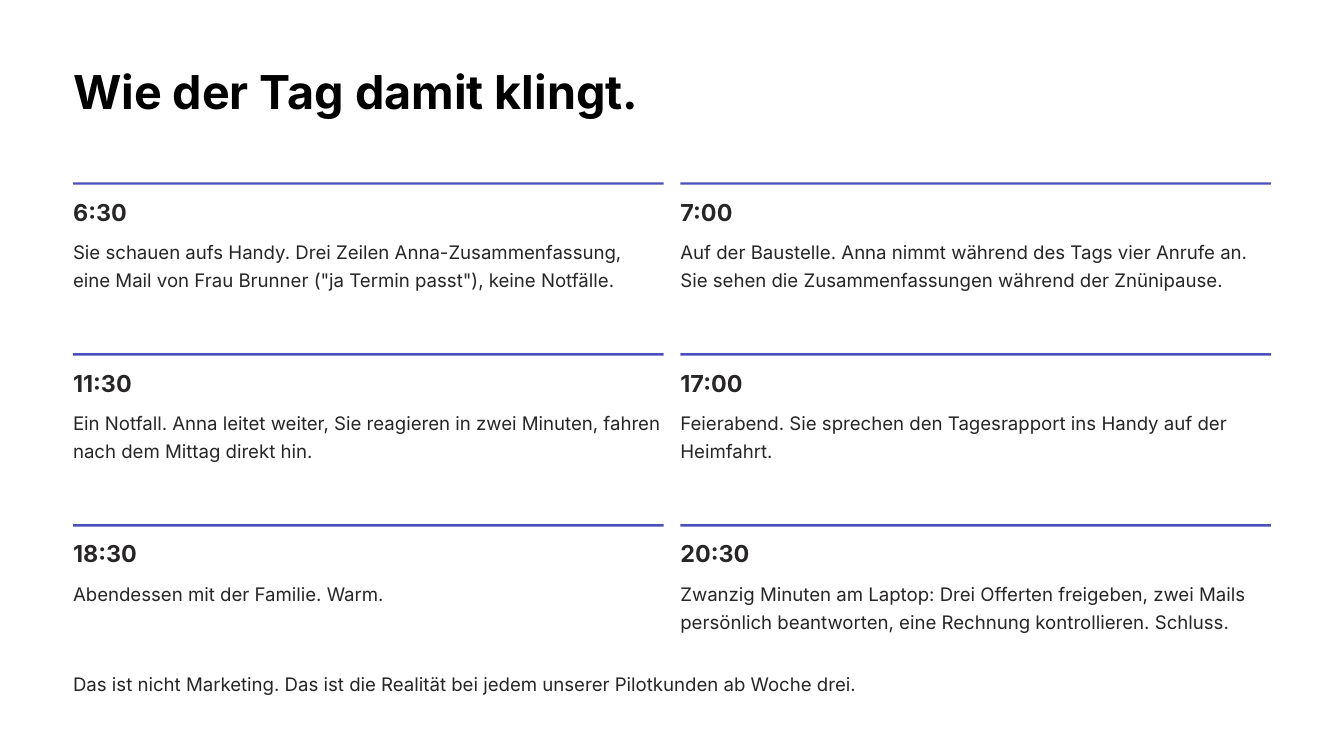
from typing import NamedTuple

from pptx import Presentation
from pptx.dml.color import RGBColor
from pptx.enum.shapes import MSO_SHAPE as Shape
from pptx.enum.text import MSO_ANCHOR as Anchor, MSO_AUTO_SIZE as Fit, PP_ALIGN as Align
from pptx.slide import Slide
from pptx.text.text import TextFrame
from pptx.util import Inches, Pt

FONT = "Inter"
COLORS = {"page": "FFFFFF", "title": "000000", "text": "272525", "rule": "4950BC"}

# Grid in inches
LEFT, TOP = 0.87, 2.17
COL, GAP = 7.03, 0.2
COLS, ROW = 2, 2.035
FULL = COLS * COL + GAP


class Style(NamedTuple):
    size: int
    line: int
    bold: bool
    color: str
    wrap: bool


class Box(NamedTuple):
    left: float
    top: float
    width: float
    height: float


class Event(NamedTuple):
    time: str
    text: str


TITLE = Style(40, 50, True, "title", False)
TIME = Style(20, 25, True, "text", False)
BODY = Style(16, 24, False, "text", True)

EVENTS = [
    Event("6:30", "Sie schauen aufs Handy. Drei Zeilen Anna-Zusammenfassung, "
          "eine Mail von Frau Brunner (\"ja Termin passt\"), keine Notfälle."),
    Event("7:00", "Auf der Baustelle. Anna nimmt während des Tags vier Anrufe an. "
          "Sie sehen die Zusammenfassungen während der Znünipause."),
    Event("11:30", "Ein Notfall. Anna leitet weiter, Sie reagieren in zwei Minuten, "
          "fahren nach dem Mittag direkt hin."),
    Event("17:00", "Feierabend. Sie sprechen den Tagesrapport ins Handy auf der Heimfahrt."),
    Event("18:30", "Abendessen mit der Familie. Warm."),
    Event("20:30", "Zwanzig Minuten am Laptop: Drei Offerten freigeben, zwei Mails "
          "persönlich beantworten, eine Rechnung kontrollieren. Schluss."),
]


def rgb(name: str) -> RGBColor:
    return RGBColor.from_string(COLORS[name])


def place(box: Box) -> list[int]:
    return [Inches(side) for side in box]


def write(frame: TextFrame, text: str, style: Style) -> None:
    frame.text = text
    frame.auto_size = Fit.NONE
    frame.word_wrap = style.wrap
    frame.vertical_anchor = Anchor.TOP
    frame.margin_left = frame.margin_right = 0
    frame.margin_top = frame.margin_bottom = 0
    para = frame.paragraphs[0]
    para.alignment = Align.LEFT
    para.line_spacing = Pt(style.line)
    para.space_before = Pt(0)
    font = para.runs[0].font
    font.name, font.size, font.bold = FONT, Pt(style.size), style.bold
    font.color.rgb = rgb(style.color)


def add_text(slide: Slide, box: Box, text: str, style: Style) -> None:
    write(slide.shapes.add_textbox(*place(box)).text_frame, text, style)


def add_rule(slide: Slide, box: Box) -> None:
    rule = slide.shapes.add_shape(Shape.RECTANGLE, *place(box))
    rule.shadow.inherit = False
    rule.fill.solid()
    rule.fill.fore_color.rgb = rgb("rule")
    rule.line.fill.background()


def add_event(slide: Slide, index: int, event: Event) -> None:
    row, col = divmod(index, COLS)
    left, top = LEFT + col * (COL + GAP), TOP + row * ROW
    add_rule(slide, Box(left, top, COL, 0.03))
    add_text(slide, Box(left, top + 0.17, 2.79, 0.35), event.time, TIME)
    add_text(slide, Box(left, top + 0.63, COL, 0.68), event.text, BODY)


def main() -> None:
    deck = Presentation()
    deck.slide_width, deck.slide_height = Inches(16), Inches(9)
    slide = deck.slides.add_slide(deck.slide_layouts[5])
    fill = slide.background.fill
    fill.solid()
    fill.fore_color.rgb = rgb("page")

    title = slide.shapes.title
    title.left, title.top, title.width, title.height = place(Box(LEFT, 0.72, 6.77, 0.7))
    write(title.text_frame, "Wie der Tag damit klingt.", TITLE)

    for index, event in enumerate(EVENTS):
        add_event(slide, index, event)
    add_text(slide, Box(LEFT, 7.94, FULL, 0.34),
             "Das ist nicht Marketing. Das ist die Realität bei jedem unserer "
             "Pilotkunden ab Woche drei.", BODY)
    deck.save("out.pptx")


if __name__ == "__main__":
    main()
